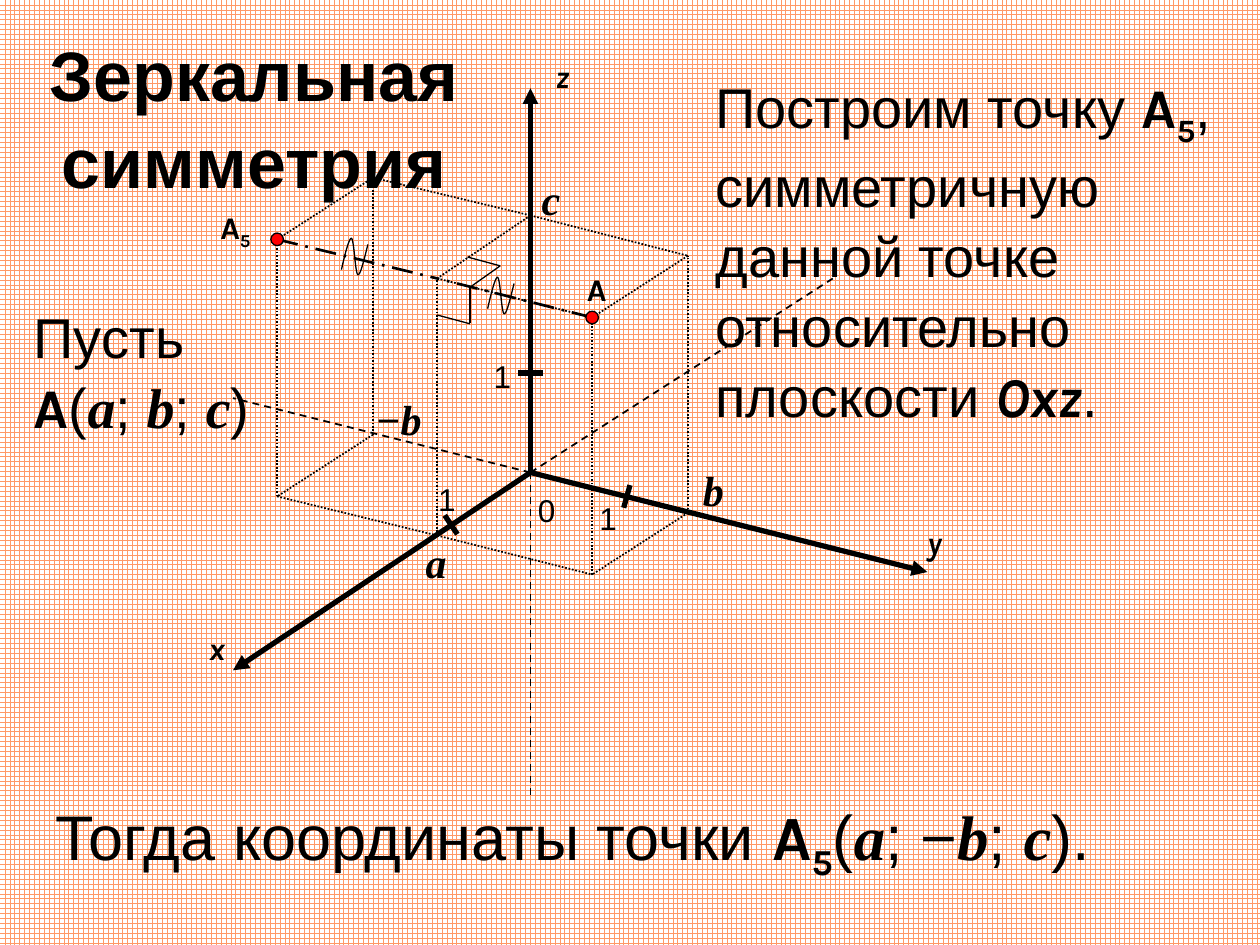
import pptx
import pptx.util
import pptx.dml.color
import pptx.enum.dml
import pptx.enum.shapes
import pptx.enum.text
from dataclasses import dataclass
from pptx.util import Inches
from lxml import etree


@dataclass(frozen=True)
class Theme:
    ink = pptx.dml.color.RGBColor(0x00, 0x00, 0x00)
    point = pptx.dml.color.RGBColor(0xFF, 0x00, 0x00)
    grid = pptx.dml.color.RGBColor(0xFF, 0x99, 0x66)
    paper = pptx.dml.color.RGBColor(0xFF, 0xFF, 0xFF)
    title = 40
    result = 36
    body = 32
    variable = 24
    label = 18
    leading = 1.04


theme = Theme()
# font, bold, italic, baseline
STYLES = {
    "plain": ("Arial", False, False, None),
    "title": ("Arial", True, False, None),
    "point": ("Karla", True, False, None),
    "index": ("Karla", True, False, "-25000"),
    "axis": ("Karla", True, True, None),
    "variable": ("Times New Roman", True, True, None),
}
DASH = pptx.enum.dml.MSO_LINE


def write(box, spans, size):
    frame = box.text_frame
    frame.word_wrap = True
    frame.auto_size = pptx.enum.text.MSO_AUTO_SIZE.SHAPE_TO_FIT_TEXT
    frame.vertical_anchor = pptx.enum.text.MSO_ANCHOR.TOP
    paragraph = frame.paragraphs[0]
    paragraph.line_spacing = theme.leading
    for text, style in spans:
        span = paragraph.add_run()
        span.text = text
        span.font.name, span.font.bold, span.font.italic, baseline = STYLES[style]
        span.font.size = pptx.util.Pt(size)
        span.font.color.rgb = theme.ink
        if baseline:
            span.font._element.set("baseline", baseline)


def draw_line(start, end, width, dash=None, arrow=False):
    line = page.shapes.add_connector(
        pptx.enum.shapes.MSO_CONNECTOR.STRAIGHT,
        *[Inches(value) for value in (*start, *end)])
    line.line.color.rgb = theme.ink
    line.line.width = pptx.util.Pt(width)
    if dash:
        line.line.dash_style = dash
    if arrow:
        etree.SubElement(line.line._get_or_add_ln(),
                         pptx.oxml.ns.qn("a:tailEnd"), type="triangle")
    etree.SubElement(line._element.spPr, pptx.oxml.ns.qn("a:effectLst"))


deck = pptx.Presentation()
deck.slide_width, deck.slide_height = Inches(10), Inches(7.5)
page = deck.slides.add_slide(deck.slide_layouts[5])

# Graph-paper background
background = page.background.fill
background.patterned()
background.pattern = pptx.enum.dml.MSO_PATTERN.LARGE_GRID
background.fore_color.rgb = theme.grid
background.back_color.rgb = theme.paper

# Title
title = page.shapes.title
title.left, title.top = Inches(0.17), Inches(0.17)
title.width, title.height = Inches(3.69), Inches(1.45)
write(title, [("Зеркальная симметрия", "title")], theme.title)
title.text_frame.paragraphs[0].alignment = pptx.enum.text.PP_ALIGN.CENTER

# Axes: solid positive halves, dashed negative halves
origin = (4.21, 3.75)
for tip in [(1.85, 5.32), (7.36, 4.54), (4.21, 0.7)]:
    draw_line(origin, tip, 3, arrow=True)
for tip in [(6.61, 2.21), (1.85, 3.16), (4.21, 6.33)]:
    draw_line(origin, tip, 1, DASH.DASH)

# Unit ticks
for start, end in [((4.11, 2.96), (4.31, 2.96)),
                   ((4.95, 4.03), (5, 3.85)),
                   ((3.53, 4.09), (3.63, 4.24))]:
    draw_line(start, end, 3)

# Coordinate boxes: the upper face is the lower one raised by c
rise = 2.04
low = {"O": origin, "a": (3.47, 4.25), "b": (5.46, 4.07), "-b": (2.96, 3.45),
       "A": (4.7, 4.56), "A5": (2.2, 3.94)}
high = {name: (x, y - rise) for name, (x, y) in low.items()}
lower_edges = ["a A", "b A", "a A5", "-b A5"]
upper_edges = ["a A", "b A", "O a", "O b", "-b A5", "-b O"]
for corners, edges in [(low, lower_edges), (high, upper_edges)]:
    for edge in edges:
        first, second = edge.split()
        draw_line(corners[first], corners[second], 1, DASH.ROUND_DOT)
for name in ["a", "b", "-b", "A", "A5"]:
    draw_line(low[name], high[name], 1, DASH.ROUND_DOT)

# Segment from A to its mirror point, in two equal halves
for name in ["A", "A5"]:
    draw_line(high[name], high["a"], 1.5, DASH.LONG_DASH_DOT)

# Right-angle marks at the plane
for start, end in [((3.73, 2.56), (3.73, 2.27)), ((3.73, 2.28), (3.97, 2.11)),
                   ((3.71, 2.04), (3.97, 2.11)), ((3.47, 2.5), (3.73, 2.57))]:
    draw_line(start, end, 0.75)

# Equal-length waves, sampled from three Bezier arcs
arcs = [((3.87, 2.45), (3.9, 2.32), (3.93, 2.2), (3.95, 2.2)),
        ((3.95, 2.2), (3.97, 2.21), (3.98, 2.48), (4, 2.49)),
        ((4, 2.49), (4.02, 2.5), (4.05, 2.37), (4.08, 2.25))]
steps = 10
wave = []
for arc in arcs:
    for step in range(1, steps + 1):
        t = step / steps
        weights = ((1 - t) ** 3, 3 * t * (1 - t) ** 2, 3 * t ** 2 * (1 - t), t ** 3)
        wave.append([sum(w * p[axis] for w, p in zip(weights, arc)) for axis in (0, 1)])
for dx, dy in [(0, 0), (-1.16, -0.31)]:
    outline = page.shapes.build_freeform(
        Inches(arcs[0][0][0] + dx), Inches(arcs[0][0][1] + dy))
    outline.add_line_segments(
        [(Inches(x + dx), Inches(y + dy)) for x, y in wave], close=False)
    mark = outline.convert_to_shape()
    mark.shadow.inherit = False
    mark.fill.background()
    mark.line.color.rgb = theme.ink
    mark.line.width = pptx.util.Pt(0.75)

# Points A and A5
diameter = 0.1
for name in ["A", "A5"]:
    x, y = high[name]
    dot = page.shapes.add_shape(
        pptx.enum.shapes.MSO_SHAPE.OVAL, Inches(x - diameter / 2),
        Inches(y - diameter / 2), Inches(diameter), Inches(diameter))
    dot.shadow.inherit = False
    dot.fill.solid()
    dot.fill.fore_color.rgb = theme.point
    dot.line.color.rgb = theme.ink
    dot.line.width = pptx.util.Pt(0.75)

# Labels and statements: left, top, width, height, size, spans
a5 = [("A", "point"), ("5", "index")]
texts = [
    (1.56, 4.93, 0.44, 0.4, theme.label, [("x", "axis")]),
    (7.26, 4.09, 0.44, 0.4, theme.label, [("y", "axis")]),
    (4.31, 0.39, 0.44, 0.4, theme.label, [("z", "axis")]),
    (4.17, 3.84, 0.35, 0.4, theme.label, [("0", "plain")]),
    (4.66, 3.9, 0.44, 0.4, theme.label, [("1", "plain")]),
    (3.82, 2.77, 0.44, 0.4, theme.label, [("1", "plain")]),
    (3.38, 3.75, 0.44, 0.4, theme.label, [("1", "plain")]),
    (4.56, 2.08, 0.35, 0.4, theme.label, [("A", "point")]),
    (1.65, 1.59, 0.52, 0.4, theme.label, a5),
    (3.28, 4.19, 0.39, 0.5, theme.variable, [("a", "variable")]),
    (5.48, 3.62, 0.39, 0.5, theme.variable, [("b", "variable")]),
    (4.2, 1.31, 0.39, 0.5, theme.variable, [("c", "variable")]),
    (2.88, 3.06, 0.59, 0.5, theme.variable, [("−b", "variable")]),
    (0.17, 2.33, 2.07, 1.18, theme.body, [
        ("Пусть ", "plain"), ("A", "point"), ("(", "plain"), ("a", "variable"),
        ("; ", "plain"), ("b", "variable"), ("; ", "plain"), ("c", "variable"),
        (")", "plain")]),
    (5.58, 0.5, 4.27, 2.79, theme.body, [
        ("Построим точку ", "plain"), *a5,
        (", симметричную данной точке относительно плоскости ", "plain"),
        ("Oxz", "axis"), (".", "plain")]),
    (0.34, 6.25, 9.33, 0.71, theme.result, [
        ("Тогда координаты точки ", "plain"), *a5, ("(", "plain"),
        ("a", "variable"), ("; −", "plain"), ("b", "variable"), ("; ", "plain"),
        ("c", "variable"), (").", "plain")]),
]
for left, top, width, height, size, spans in texts:
    box = page.shapes.add_textbox(
        Inches(left), Inches(top), Inches(width), Inches(height))
    write(box, spans, size)

deck.save("out.pptx")
